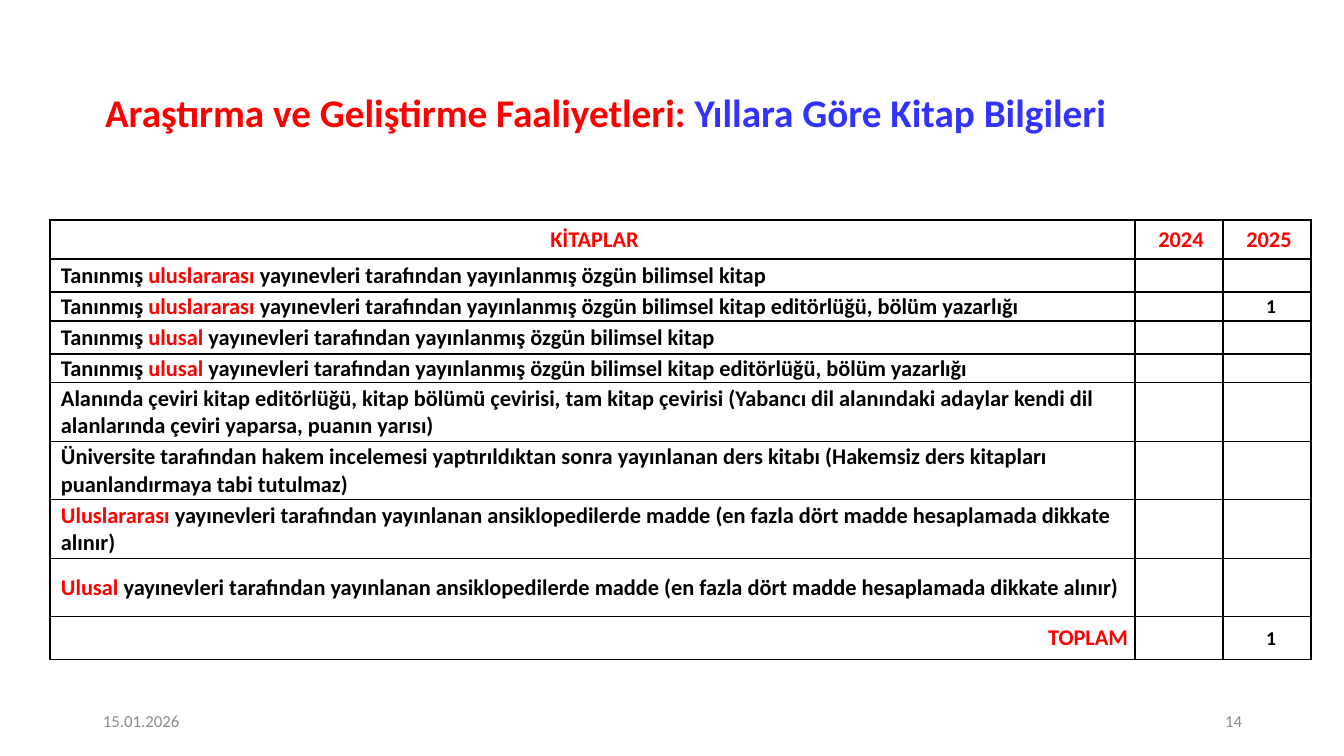
import pptx
import pptx.dml.color
import pptx.enum.text
import pptx.oxml.ns
import pptx.util
from dataclasses import dataclass
from lxml import etree

PP = pptx.enum.text.PP_ALIGN
MIDDLE = pptx.enum.text.MSO_ANCHOR.MIDDLE
qn = pptx.oxml.ns.qn


@dataclass(frozen=True)
class Theme:
    font: str = "Calibri"
    black: str = "000000"
    red: str = "FF0000"
    blue: str = "3333FF"
    gray: str = "8C8C8C"
    title: int = 28
    body: int = 16
    count: int = 14
    footer: int = 12
    border: int = 1


T = Theme()

# Text is a list of (words, colour) runs.
TITLE = [("Araştırma ve Geliştirme Faaliyetleri: ", T.red),
         ("Yıllara Göre Kitap Bilgileri", T.blue)]
DATE = [("15.01.2026", T.gray)]
PAGE = [("14", T.gray)]

HEADER = ["KİTAPLAR", "2024", "2025"]
BOOK = " yayınevleri tarafından yayınlanmış özgün bilimsel kitap"
EDITOR = BOOK + " editörlüğü, bölüm yazarlığı"
ENTRY = (" yayınevleri tarafından yayınlanan ansiklopedilerde madde "
         "(en fazla dört madde hesaplamada dikkate alınır)")
TRANSLATION = ("Alanında çeviri kitap editörlüğü, kitap bölümü çevirisi, tam kitap çevirisi "
               "(Yabancı dil alanındaki adaylar kendi dil alanlarında çeviri yaparsa, "
               "puanın yarısı)")
TEXTBOOK = ("Üniversite tarafından hakem incelemesi yaptırıldıktan sonra yayınlanan ders kitabı "
            "(Hakemsiz ders kitapları puanlandırmaya tabi tutulmaz)")


def scoped(lead, scope, rest):
    """Runs with the publisher's scope picked out in red."""
    return [(lead, T.black), (scope, T.red), (rest, T.black)]


# (label, 2024, 2025)
ROWS = [
    (scoped("Tanınmış ", "uluslararası", BOOK), "", ""),
    (scoped("Tanınmış ", "uluslararası", EDITOR), "", " 1"),
    (scoped("Tanınmış ", "ulusal", BOOK), "", ""),
    (scoped("Tanınmış ", "ulusal", EDITOR), "", ""),
    ([(TRANSLATION, T.black)], "", ""),
    ([(TEXTBOOK, T.black)], "", ""),
    (scoped("", "Uluslararası", ENTRY), "", ""),
    (scoped("", "Ulusal", ENTRY), "", ""),
    ([("TOPLAM", T.red)], "", " 1"),
]

# px
SLIDE = (1344, 756)
TITLE_BOX = (28, 72, 1155, 85)
DATE_BOX = (93, 701, 302, 40)
PAGE_BOX = (950, 701, 302, 40)
TABLE_AT = (50, 220)
COLS = [1085, 88, 88]
ROW_HEIGHTS = [39, 33, 29, 33, 29, 59, 58, 59, 58, 43]
CELL_INSET, CELL_INDENT = 7, 4


def px(n):
    return pptx.util.Emu(round(n * 914400 / 100.8))


def write(tf, runs, size, bold=False, align=PP.LEFT, spacing=None, indent=0):
    p = tf.paragraphs[0]
    p.alignment = align
    if spacing:
        p.line_spacing = spacing
    if indent:
        p._p.get_or_add_pPr().set("marL", str(px(indent)))
    runs = [run for run in runs if run[0]]
    for text, color in runs:
        r = p.add_run()
        r.text = text
        r.font.name = T.font
        r.font.size = pptx.util.Pt(size)
        r.font.bold = bold
        r.font.color.rgb = pptx.dml.color.RGBColor.from_string(color)
    if not runs:
        # keeps an empty cell from stretching its row
        etree.SubElement(p._p, qn("a:endParaRPr"), sz=str(size * 100))


def add_text(slide, box, runs, size, **fmt):
    tf = slide.shapes.add_textbox(*map(px, box)).text_frame
    tf.word_wrap = True
    tf.vertical_anchor = MIDDLE
    write(tf, runs, size, **fmt)


def add_borders(cell):
    tcPr = cell._tc.get_or_add_tcPr()
    for side in ("a:lnL", "a:lnR", "a:lnT", "a:lnB"):
        ln = etree.SubElement(tcPr, qn(side), w=str(pptx.util.Pt(T.border)))
        fill = etree.SubElement(ln, qn("a:solidFill"))
        etree.SubElement(fill, qn("a:srgbClr"), val=T.black)


def fill_cell(cell, runs, size, align):
    add_borders(cell)
    cell.fill.background()
    cell.vertical_anchor = MIDDLE
    cell.margin_left = cell.margin_right = px(CELL_INSET)
    cell.margin_top = cell.margin_bottom = 0
    write(cell.text_frame, runs, size, bold=True, align=align, indent=CELL_INDENT)


def add_books_table(slide):
    size = (sum(COLS), sum(ROW_HEIGHTS))
    table = slide.shapes.add_table(len(ROW_HEIGHTS), len(COLS),
                                   *map(px, TABLE_AT + size)).table
    table.first_row = table.horz_banding = False
    for column, width in zip(table.columns, COLS):
        column.width = px(width)
    for row, height in zip(table.rows, ROW_HEIGHTS):
        row.height = px(height)

    for c, text in enumerate(HEADER):
        fill_cell(table.cell(0, c), [(text, T.red)], T.body, PP.CENTER)
    for i, (label, *counts) in enumerate(ROWS, start=1):
        align = PP.RIGHT if i == len(ROWS) else PP.LEFT
        fill_cell(table.cell(i, 0), label, T.body, align)
        for c, count in enumerate(counts, start=1):
            fill_cell(table.cell(i, c), [(count, T.black)], T.count, PP.CENTER)


def main():
    prs = pptx.Presentation()
    prs.slide_width, prs.slide_height = map(px, SLIDE)
    slide = prs.slides.add_slide(prs.slide_layouts[6])
    add_text(slide, TITLE_BOX, TITLE, T.title, bold=True, align=PP.CENTER, spacing=0.9)
    add_text(slide, DATE_BOX, DATE, T.footer)
    add_text(slide, PAGE_BOX, PAGE, T.footer, align=PP.RIGHT)
    add_books_table(slide)
    prs.save("out.pptx")


if __name__ == "__main__":
    main()
